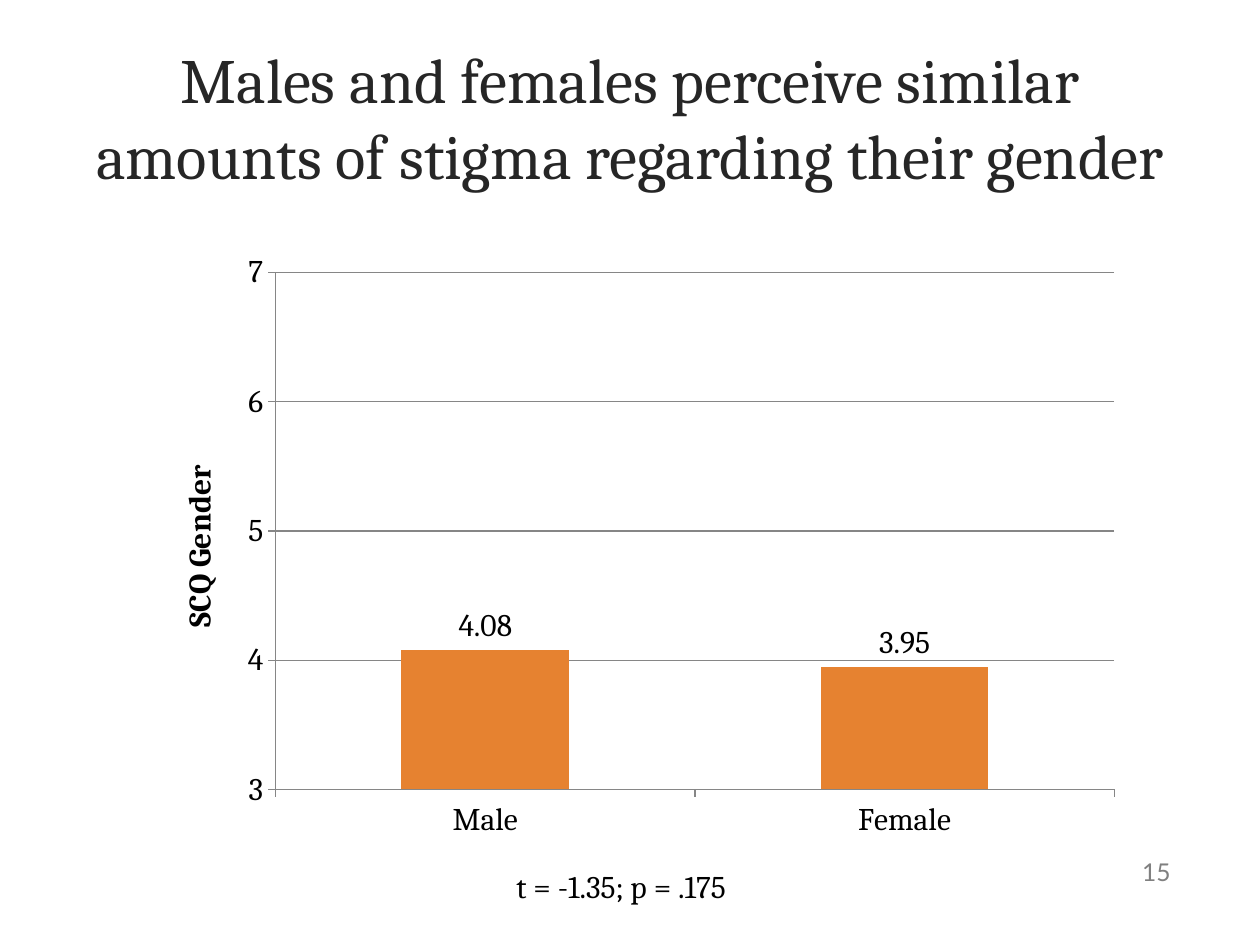
import pptx
import pptx.util
import pptx.chart.data
import pptx.dml.color
import pptx.enum.chart
import pptx.enum.text
import pptx.oxml

SCALE = 9144
FACE = "Cambria"
HUES = {"title": "262626", "text": "000000", "bar": "E68230",
        "line": "868686", "page": "808080"}
ALIGN = pptx.enum.text.PP_ALIGN
ANCHOR = pptx.enum.text.MSO_ANCHOR


def px(*nums):
    return [pptx.util.Emu(num * SCALE) for num in nums]


def hue(name):
    return pptx.dml.color.RGBColor.from_string(HUES[name])


def style(font, size=18, color="text", face=FACE, bold=False):
    font.size = pptx.util.Pt(size)
    font.color.rgb = hue(color)
    font.name = face
    font.bold = bold


def add_text(slide, text, box, align=ALIGN.LEFT, anchor=ANCHOR.TOP,
             wrap=True, **look):
    frame = slide.shapes.add_textbox(*px(*box)).text_frame
    frame.word_wrap = wrap
    frame.vertical_anchor = anchor
    para = frame.paragraphs[0]
    para.alignment = align
    run = para.add_run()
    run.text = text
    style(run.font, **look)


def set_line(line):
    line.color.rgb = hue("line")
    line.width = pptx.util.Pt(0.75)


def set_plot(chart, **parts):
    tags = "".join(f'<c:{key} val="{val}"/>' for key, val in parts.items())
    area = chart._chartSpace.chart.plotArea
    for old in area.findall(pptx.oxml.ns.qn("c:layout")):
        area.remove(old)
    area.insert(0, pptx.oxml.parse_xml(
        f'<c:layout {pptx.oxml.ns.nsdecls("c")}><c:manualLayout>'
        '<c:layoutTarget val="inner"/><c:xMode val="edge"/>'
        f'<c:yMode val="edge"/>{tags}</c:manualLayout></c:layout>'))


def add_bars(slide, box, title, cats, vals):
    data = pptx.chart.data.CategoryChartData(number_format="0.00")
    data.categories = cats
    data.add_series("Series 1", vals)
    kind = pptx.enum.chart.XL_CHART_TYPE.COLUMN_CLUSTERED
    chart = slide.shapes.add_chart(kind, *px(*box), data).chart
    chart.has_legend = False
    chart.has_title = False
    style(chart.font)
    set_plot(chart, x=0.13, y=0.05, w=0.85, h=0.85)

    plot = chart.plots[0]
    plot.gap_width = 150
    plot.vary_by_categories = False
    fill = plot.series[0].format.fill
    fill.solid()
    fill.fore_color.rgb = hue("bar")
    plot.has_data_labels = True
    labels = plot.data_labels
    labels.show_value = True
    labels.number_format = "0.00"
    labels.number_format_is_linked = False
    labels.position = pptx.enum.chart.XL_LABEL_POSITION.OUTSIDE_END
    style(labels.font)

    axis = chart.value_axis
    axis.minimum_scale, axis.maximum_scale, axis.major_unit = 3, 7, 1
    axis.tick_labels.number_format = "0"
    axis.tick_labels.number_format_is_linked = False
    axis.has_major_gridlines = True
    set_line(axis.major_gridlines.format.line)
    for side in (axis, chart.category_axis):
        side.major_tick_mark = pptx.enum.chart.XL_TICK_MARK.OUTSIDE
        set_line(side.format.line)
        style(side.tick_labels.font)
    run = axis.axis_title.text_frame.paragraphs[0].add_run()
    run.text = title
    style(run.font, bold=True)


def main():
    deck = pptx.Presentation()
    deck.slide_width, deck.slide_height = px(1000, 750)
    slide = deck.slides.add_slide(deck.slide_layouts[6])
    add_text(slide, "Males and females perceive similar amounts of stigma "
             "regarding their gender", (50, 30, 900, 125),
             align=ALIGN.CENTER, anchor=ANCHOR.MIDDLE, size=36, color="title")
    add_text(slide, "t = -1.35; p = .175", (400, 683, 200, 40), wrap=False)
    add_bars(slide, (117, 192, 783, 483), "SCQ Gender",
             ("Male", "Female"), (4.08, 3.95))
    add_text(slide, "15", (706, 672, 233, 40), align=ALIGN.RIGHT,
             anchor=ANCHOR.MIDDLE, size=14, color="page", face="Lato")
    deck.save("out.pptx")


if __name__ == "__main__":
    main()
